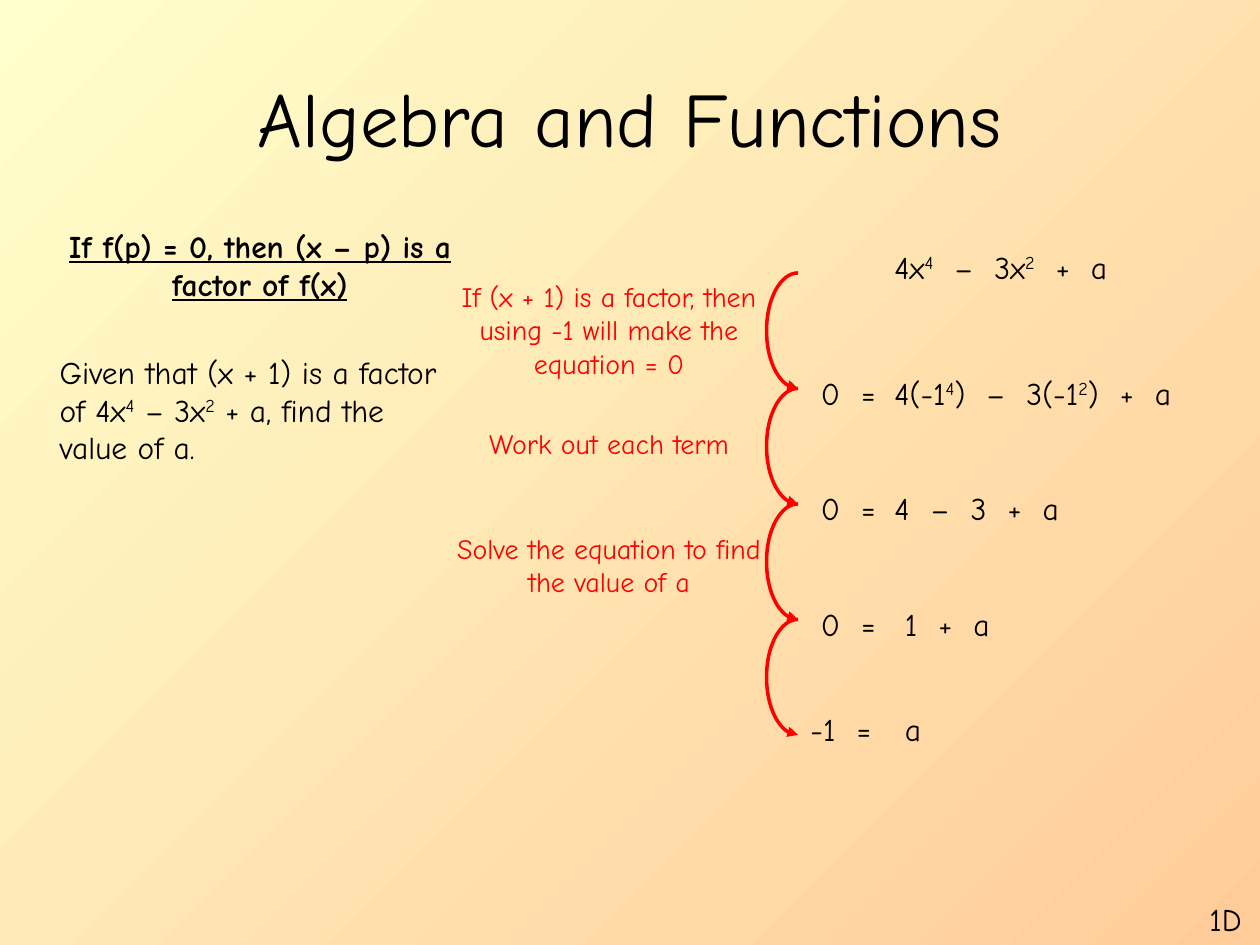
import math
from lxml import etree
from pptx import Presentation
from pptx.dml.color import RGBColor
from pptx.enum.text import MSO_ANCHOR, PP_ALIGN
from pptx.oxml.ns import qn
from pptx.util import Pt

LEFT, CENTER = PP_ALIGN.LEFT, PP_ALIGN.CENTER
TOP, MIDDLE = MSO_ANCHOR.TOP, MSO_ANCHOR.MIDDLE
COLORS = {"text": "000000", "note": "FF0000", "light": "FFFFCC", "dark": "FFCC99"}
FONT = "Comic Neue"

# Content: ^ switches superscript on and off
TITLE = "Algebra and Functions"
RULE = "If f(p) = 0, then (x – p) is a factor of f(x)"
QUESTION = "Given that (x + 1) is a factor of 4x^4^ – 3x^2^ + a, find the value of a."
PAGE = "1D"
# Working: top, left side and its x, right side with its x and width
STEPS = [
    (138, "", 0, "4x^4^  –  3x^2^  +  a", 504, 168),
    (210, "0  =", 462, "4(-1^4^)  –  3(-1^2^)  +  a", 504, 228),
    (276, "0  =", 462, "4  –  3  +  a", 504, 114),
    (342, "0  =", 462, "1  +  a", 510, 108),
    (402, "-1  =", 456, "a", 510, 30),
]
# Notes: top, height, text
NOTES = [
    (156, 65, "If (x + 1) is a factor, then using -1 will make the equation = 0"),
    (240, 27, "Work out each term"),
    (300, 46, "Solve the equation to find the value of a"),
]
ARC_RIGHT, ARC_TOP, ARC_W, ARC_H = 456, 156, 18, 66
ARC_POINTS = 32
LINE_H = 29

prs = Presentation()
prs.slide_width, prs.slide_height = Pt(720), Pt(540)
s = prs.slides.add_slide(prs.slide_layouts[6])

# Background
fill = s.background.fill
fill.gradient()
fill.gradient_angle = 315
for stop, name in zip(fill.gradient_stops, ("light", "dark")):
    stop.color.rgb = RGBColor.from_string(COLORS[name])


def write(p, text, color="text", align=LEFT, **fmt):
    p.alignment = align
    for i, part in enumerate(text.split("^")):
        r = p.add_run()
        r.text = part
        r.font.color.rgb = RGBColor.from_string(COLORS[color])
        for key, value in {"name": FONT, "size": Pt(18), **fmt}.items():
            setattr(r.font, key, value)
        if i % 2:
            r._r.get_or_add_rPr().set("baseline", "30000")


def add_box(x, y, w, h, text, anchor=TOP, **fmt):
    tf = s.shapes.add_textbox(Pt(x), Pt(y), Pt(w), Pt(h)).text_frame
    tf.word_wrap = True
    tf.vertical_anchor = anchor
    write(tf.paragraphs[0], text, **fmt)
    return tf


def add_arc(top):
    points = []
    for i in range(ARC_POINTS + 1):
        a = math.pi * i / ARC_POINTS
        points.append((Pt(ARC_RIGHT - ARC_W * math.sin(a)),
                       Pt(top + ARC_H / 2 * (1 - math.cos(a)))))
    fb = s.shapes.build_freeform(*points[0])
    fb.add_line_segments(points[1:], close=False)
    sp = fb.convert_to_shape()
    sp.shadow.inherit = False
    sp.fill.background()
    sp.line.width = Pt(2)
    sp.line.color.rgb = RGBColor.from_string(COLORS["note"])
    etree.SubElement(sp.line._get_or_add_ln(), qn("a:tailEnd"), type="triangle")


# Title, rule and question
add_box(36, 21.6, 648, 90, TITLE, anchor=MIDDLE, align=CENTER, size=Pt(44))
tf = add_box(0, 126, 270, 356, RULE, align=CENTER, bold=True, underline=True)
p = tf.add_paragraph()
p.space_before = Pt(28.8)
write(p, QUESTION)
for p in tf.paragraphs:
    p._p.get_or_add_pPr().set("marL", str(Pt(27)))

# Working
for top, lhs, lhs_x, rhs, rhs_x, rhs_w in STEPS:
    add_box(rhs_x, top, rhs_w, LINE_H, rhs)
    if lhs:
        add_box(lhs_x, top, 60, LINE_H, lhs)

# Arcs from each step to the next
for i in range(len(STEPS) - 1):
    add_arc(ARC_TOP + i * ARC_H)

# Notes and page label
for top, height, text in NOTES:
    add_box(252, top, 192, height, text, color="note", align=CENTER, size=Pt(16))
add_box(684, 511, 36, LINE_H, PAGE)

prs.save("out.pptx")
